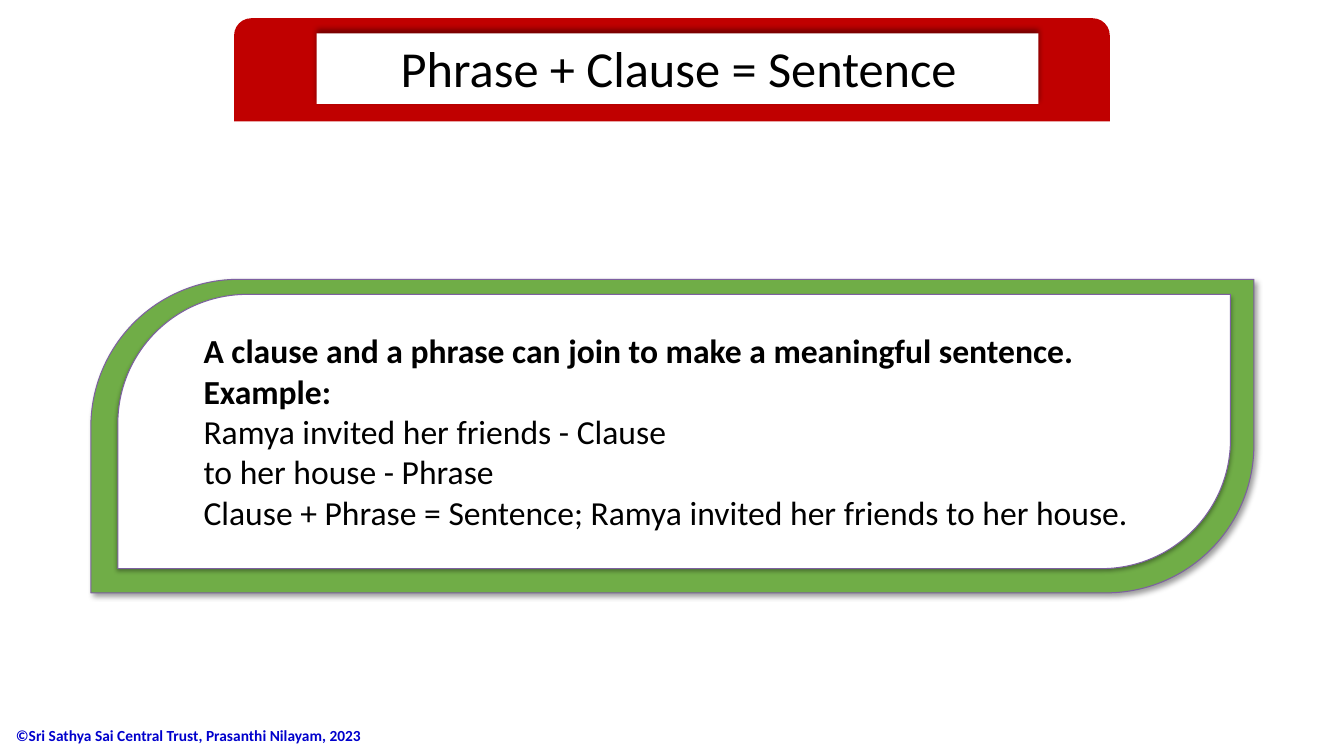
from lxml.etree import SubElement as Sub
from pptx import Presentation
from pptx.dml.color import RGBColor
from pptx.enum.shapes import MSO_SHAPE as Geo
from pptx.enum.text import MSO_ANCHOR as Anchor, MSO_AUTO_SIZE as Fit, PP_ALIGN as Align
from pptx.oxml.ns import qn
from pptx.util import Cm, Pt

RED = RGBColor(0xC0, 0x00, 0x00)
GREEN = RGBColor(0x70, 0xAD, 0x47)
WHITE = RGBColor(0xFF, 0xFF, 0xFF)
BLACK = RGBColor(0x00, 0x00, 0x00)
BLUE = RGBColor(0x00, 0x00, 0xCC)
VIOLET = RGBColor(0x7D, 0x60, 0xA0)


def place(shape, box):
    shape.left, shape.top, shape.width, shape.height = (Cm(n) for n in box)


def write(shape, lines, size, color=BLACK, bold=0, align=Align.LEFT, anchor=Anchor.TOP):
    """Fill a shape with lines of text; the first `bold` lines are bold."""
    frame = shape.text_frame
    frame.text = "\n".join(lines)
    frame.word_wrap = True
    frame.auto_size = Fit.NONE
    frame.vertical_anchor = anchor
    for i, para in enumerate(frame.paragraphs):
        para.alignment = align
        font = para.font
        font.name, font.size, font.bold = "Calibri", Pt(size), i < bold
        font.color.rgb = color


def shade(shape, alpha, blur, dist, angle):
    """Add an outer shadow: percent, points, points, degrees."""
    effects = shape._element.spPr.find(qn("a:effectLst"))
    outer = Sub(effects, qn("a:outerShdw"), blurRad=str(Pt(blur)), dist=str(Pt(dist)),
                dir=str(angle * 60000), algn="ctr", rotWithShape="0")
    black = Sub(outer, qn("a:srgbClr"), val=str(BLACK))
    Sub(black, qn("a:alpha"), val=str(alpha * 1000))


def panel(slide, geo, box, fill, line=None, shadow=None):
    shape = slide.shapes.add_shape(geo, *(Cm(n) for n in box))
    shape.shadow.inherit = False
    shape.fill.solid()
    shape.fill.fore_color.rgb = fill
    if line is None:
        shape.line.fill.background()
    else:
        shape.line.color.rgb = line
        shape.line.width = Pt(0.75)
    if shadow:
        shade(shape, *shadow)
    return shape


def leaf(slide, box, fill, shadow):
    """Draw a panel with two opposite corners rounded."""
    shape = panel(slide, Geo.ROUND_2_DIAG_RECTANGLE, box, fill, VIOLET, shadow)
    shape.adjustments[0] = 0.471
    shape.adjustments[1] = 0


def label(slide, box, lines, size, **style):
    shape = slide.shapes.add_textbox(*(Cm(n) for n in box))
    write(shape, lines, size, **style)


def main():
    deck = Presentation()
    deck.slide_width, deck.slide_height = Cm(33.87), Cm(19.05)
    slide = deck.slides.add_slide(deck.slide_layouts[5])

    # Footer
    label(slide, (0.15, 18.01, 9.68, 1.04),
          ["©Sri Sathya Sai Central Trust, Prasanthi Nilayam, 2023"],
          11, color=BLUE, bold=1, anchor=Anchor.MIDDLE)

    # Banner, with the title brought in front of it
    panel(slide, Geo.ROUND_2_SAME_RECTANGLE, (5.9, 0.46, 22.07, 2.6), RED)
    panel(slide, Geo.RECTANGLE, (7.98, 0.84, 18.19, 1.78), WHITE, shadow=(40, 4, 3, 270))
    title = slide.shapes.title
    slide.shapes._spTree.append(title._element)
    place(title, (7.87, 0.81, 18.47, 1.8))
    write(title, ["Phrase + Clause = Sentence"], 36, align=Align.CENTER)

    # Lesson card
    leaf(slide, (2.29, 7.04, 29.31, 7.9), GREEN, (40, 4, 3, 45))
    leaf(slide, (2.97, 7.42, 28.04, 6.91), WHITE, (35, 3.1, 1.8, 90))
    label(slide, (4.88, 8.2, 24.69, 5.38), [
        "A clause and a phrase can join to make a meaningful sentence.",
        "Example:",
        "Ramya invited her friends - Clause",
        "to her house - Phrase",
        "Clause + Phrase = Sentence; Ramya invited her friends to her house.",
    ], 24, bold=2)

    deck.save("out.pptx")


if __name__ == "__main__":
    main()
